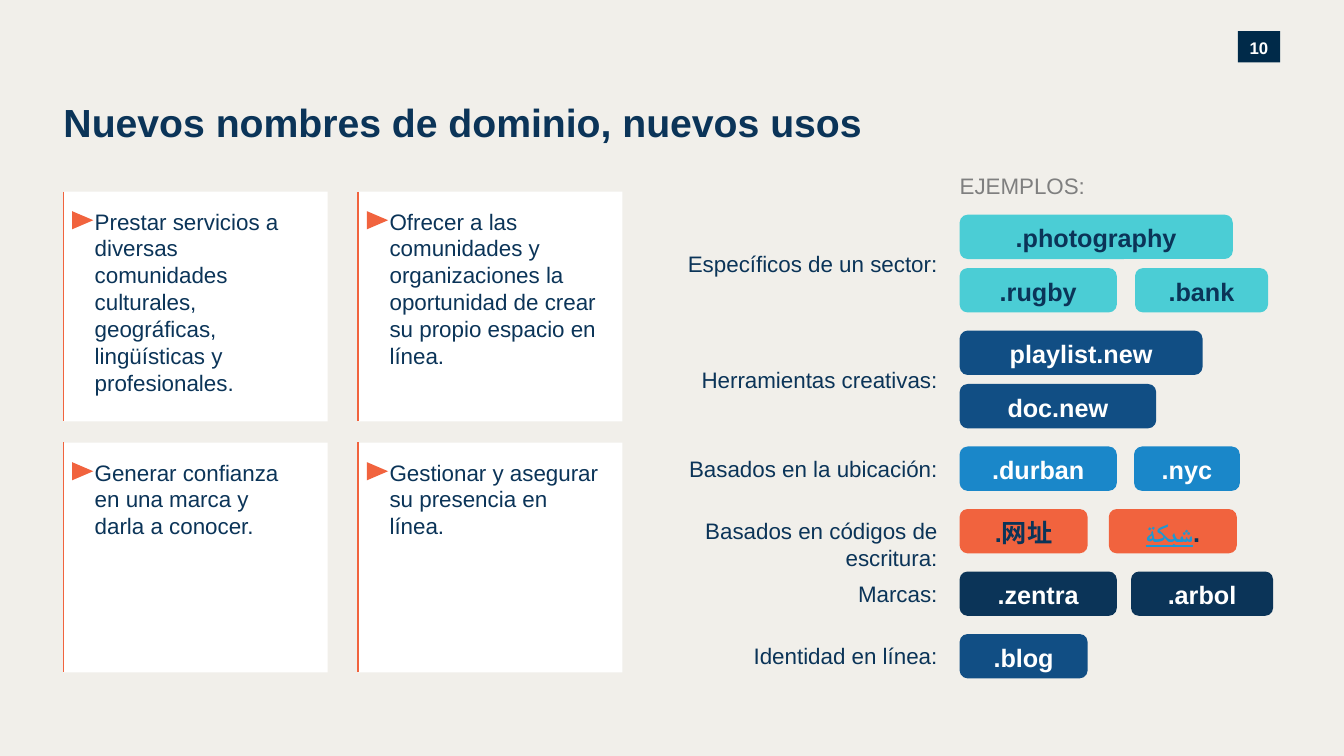
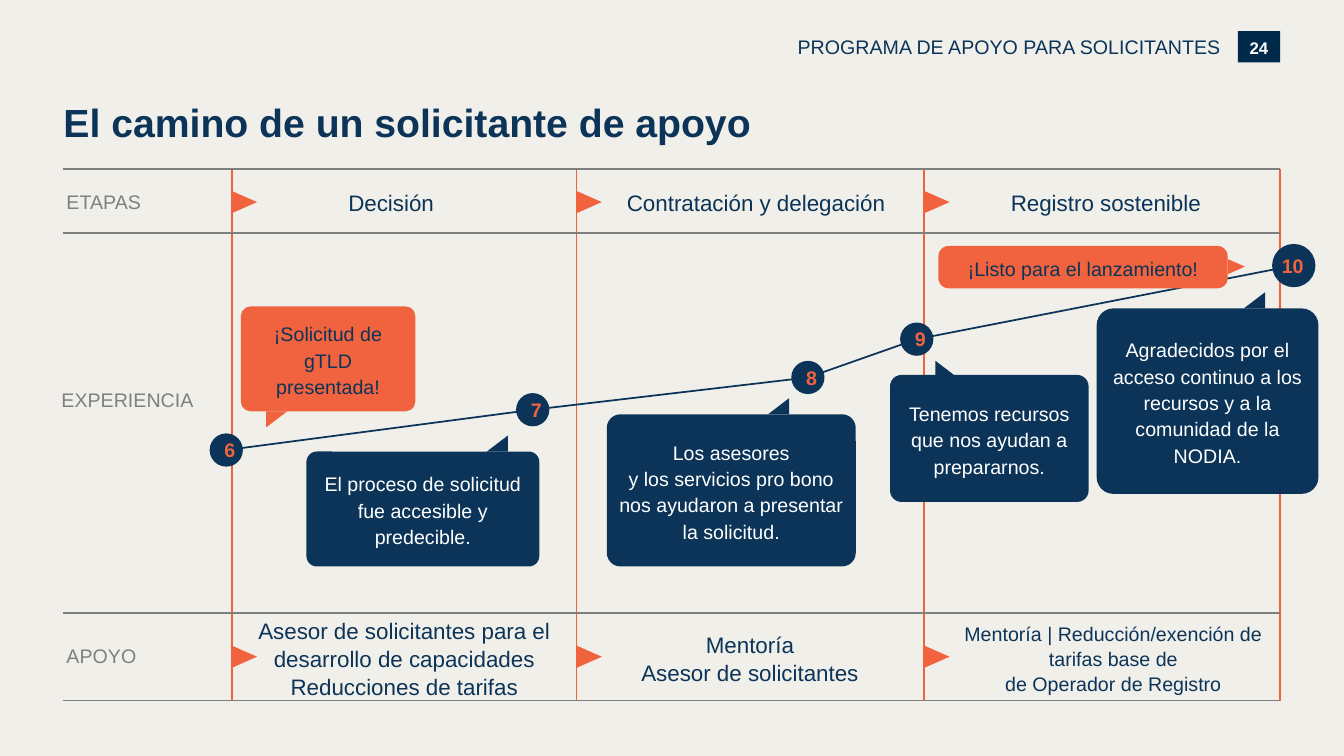
from itertools import pairwise

from lxml.etree import SubElement
from pptx import Presentation
from pptx.dml.color import RGBColor
from pptx.enum.shapes import MSO_CONNECTOR, MSO_SHAPE
from pptx.enum.text import MSO_ANCHOR, MSO_AUTO_SIZE, PP_ALIGN
from pptx.oxml.ns import qn
from pptx.util import Inches, Pt


class Theme:
    font = "Arial"
    paper, white, gray = "F1EFEA", "FFFFFF", "7F7F7F"
    navy, night, blue, sky = "0B3458", "002A49", "114E84", "1A87C9"
    aqua, coral, link = "4BCDD5", "F1633E", "1D98D3"
    title, tag, body, note, page = 28, 18, 16, 14, 12
    rule = 1.25


# All lengths are counted in cells of a square grid, ten cells to the inch.
CELL = Inches(0.1)
WIDE, HIGH = 133.33, 75
LEFT, RIGHT = 6.3, 127
RECT, ROUND, OVAL = MSO_SHAPE.RECTANGLE, MSO_SHAPE.ROUNDED_RECTANGLE, MSO_SHAPE.OVAL
ARROW, TAIL = MSO_SHAPE.ISOSCELES_TRIANGLE, MSO_SHAPE.RIGHT_TRIANGLE
TOP, MID = MSO_ANCHOR.TOP, MSO_ANCHOR.MIDDLE


def box(page, kind, at, text="", fill=None, ink=Theme.navy, size=Theme.body,
        bold=False, align=PP_ALIGN.CENTER, anchor=MID, pad=(0, 0, 0, 0),
        space=1.0, bend=None, turn=0, flip=False):
    """Add a filled shape, or a text box when kind is None; at is in cells."""
    place = [int(n * CELL) for n in at]
    if kind is None:
        item = page.shapes.add_textbox(*place)
    else:
        item = page.shapes.add_shape(kind, *place)
        item.shadow.inherit = False
        item.fill.solid()
        item.fill.fore_color.rgb = RGBColor.from_string(fill)
        item.line.fill.background()
        item.rotation = turn
        if bend is not None:
            item.adjustments[0] = bend
        if flip:
            item._element.spPr.xfrm.set("flipH", "1")
    if text:
        frame = item.text_frame
        frame.word_wrap = True
        frame.vertical_anchor = anchor
        (frame.margin_left, frame.margin_top,
         frame.margin_right, frame.margin_bottom) = [int(n * CELL) for n in pad]
        frame.text = text
        for para in frame.paragraphs:
            para.alignment = align
            para.line_spacing = space
            for run in para.runs:
                run.font.name = Theme.font
                run.font.size = Pt(size)
                run.font.bold = bold
                run.font.color.rgb = RGBColor.from_string(ink)
    return item


def line(page, start, end, ink):
    ends = [int(n * CELL) for n in (*start, *end)]
    item = page.shapes.add_connector(MSO_CONNECTOR.STRAIGHT, *ends)
    item.line.color.rgb = RGBColor.from_string(ink)
    item.line.width = Pt(Theme.rule)
    SubElement(item._element.spPr, qn("a:effectLst"))


deck = Presentation()
deck.slide_width, deck.slide_height = int(WIDE * CELL), int(HIGH * CELL)
back = deck.slide_master.background.fill
back.solid()
back.fore_color.rgb = RGBColor.from_string(Theme.paper)

# Shared frame: title and page number
layout = deck.slide_layouts[5]
head = layout.placeholders[0]
head.left, head.top, head.width, head.height = [
    int(n * CELL) for n in (LEFT, 9.8, 85.1, 5.7)]
pages = []
for title, number in [("Nuevos nombres de dominio, nuevos usos", "10"),
                      ("El camino de un solicitante de apoyo", "24")]:
    page = deck.slides.add_slide(layout)
    frame = page.shapes.title.text_frame
    frame.text = title
    frame.auto_size = MSO_AUTO_SIZE.NONE
    frame.vertical_anchor = TOP
    frame.margin_left = frame.margin_top = frame.margin_right = frame.margin_bottom = 0
    para = frame.paragraphs[0]
    para.alignment = PP_ALIGN.LEFT
    font = para.runs[0].font
    font.name, font.size, font.bold = Theme.font, Pt(Theme.title), True
    font.color.rgb = RGBColor.from_string(Theme.navy)
    box(page, RECT, (RIGHT - 4.2, 3.1, 4.2, 3.1), number, Theme.night,
        Theme.white, Theme.page, True, space=1.08)
    pages.append(page)
uses, road = pages

# Slide 1: cards in a grid of two by two
cards = [
    ("Prestar servicios a diversas comunidades culturales, geográficas, "
     "lingüísticas y profesionales.", 2.4),
    ("Ofrecer a las comunidades y organizaciones la oportunidad de crear "
     "su propio espacio en línea.", 2),
    ("Generar confianza en una marca y darla a conocer.", 3.9),
    ("Gestionar y asegurar su presencia en línea.", 2),
]
for i, (text, inset) in enumerate(cards):
    x, y = LEFT + i % 2 * 29.25, 19 + i // 2 * 24.9
    box(uses, RECT, (x, y, 26.2, 22.8), text, Theme.white,
        align=PP_ALIGN.LEFT, anchor=TOP, pad=(3.1, 1.6, inset, 2))
    box(uses, ARROW, (x + 1, y + 1.8, 1.8, 2.1), fill=Theme.coral, turn=90)
    line(uses, (x, y), (x, y + 22.8), Theme.coral)

# Slide 1: labels with their example tags, one inner list per line of tags
edge, tall, step, gap = 95.2, 4.4, 5.3, 1.8
box(uses, None, (edge, 17.1, 32.9, 2.7), "EJEMPLOS:", ink=Theme.gray,
    align=PP_ALIGN.LEFT, anchor=TOP)
groups = [
    ("Específicos de un sector:", Theme.aqua, Theme.navy,
     [[(".photography", edge, 27.1)],
      [(".rugby", edge, 15.6), (".bank", 112.6, 13.2)]]),
    ("Herramientas creativas:", Theme.blue, Theme.white,
     [[("playlist.new", edge, 24.1)], [("doc.new", edge, 19.5)]]),
    ("Basados en la ubicación:", Theme.sky, Theme.white,
     [[(".durban", edge, 15.6), (".nyc", 112.5, 10.5)]]),
    ("Basados en códigos de escritura:", Theme.coral, Theme.navy,
     [[(".网址", edge, 12.7), ("شبكة", 110, 12.7)]]),
    ("Marcas:", Theme.navy, Theme.white,
     [[(".zentra", edge, 15.6), (".arbol", 112.2, 14.1)]]),
    ("Identidad en línea:", Theme.blue, Theme.white,
     [[(".blog", edge, 12.7)]]),
]
y = 21.3
for label, fill, ink, rows in groups:
    deep = tall + (len(rows) - 1) * step
    box(uses, None, (61.8, y + deep / 2 - 1.35, 31.2, 2.7), label,
        align=PP_ALIGN.RIGHT, anchor=TOP)
    for i, row in enumerate(rows):
        for text, x, wide in row:
            tag = box(uses, ROUND, (x, y + i * step, wide, tall), text, fill, ink,
                      Theme.tag, True, space=1.06, bend=0.18)
            if text == "شبكة":
                para = tag.text_frame.paragraphs[0]
                word, dot = para.runs[0].font, para.add_run()
                dot.text = "."
                dot.font.name, dot.font.size, dot.font.bold = word.name, word.size, True
                dot.font.color.rgb = word.color.rgb
                word.color.rgb = RGBColor.from_string(Theme.link)
                word.underline = True
    y += deep + gap

# Slide 2: table lines, row names and stages
box(road, None, (72.8, 3.5, 48.3, 2.4), "PROGRAMA DE APOYO PARA SOLICITANTES",
    size=Theme.note, align=PP_ALIGN.RIGHT, anchor=TOP)
for name, x, y in [("ETAPAS", 6.6, 18.8), ("EXPERIENCIA", 6.1, 38.5),
                   ("APOYO", 6.6, 63.9)]:
    box(road, None, (x, y, 16.4, 2.4), name, ink=Theme.gray, size=Theme.note,
        align=PP_ALIGN.LEFT, anchor=TOP)
for x in (23, 57.2, 91.7, RIGHT):
    line(road, (x, 16.8), (x, 69.5), Theme.coral)
for y in (16.8, 23.1, 60.8, 69.5):
    line(road, (LEFT, y), (RIGHT, y), Theme.gray)
stages = [
    (23, "Decisión", 22.7, 23.4, 33.4, Theme.body,
     "Asesor de solicitantes para el desarrollo de capacidades\vReducciones de tarifas"),
    (57.2, "Contratación y delegación", 58.9, 57.2, 34.4, Theme.body,
     "Mentoría\vAsesor de solicitantes"),
    (91.7, "Registro sostenible", 93.6, 91.4, 38.1, Theme.note,
     "Mentoría | Reducción/exención de\ntarifas base de\nde Operador de Registro"),
]
for edge, stage, x, left, wide, size, help_text in stages:
    box(road, None, (x, 17.7, 32.2, 4.6), stage, space=1.06)
    box(road, None, (left, 61.4, wide, 7.7), help_text, size=size, space=1.06)
    for y in (18.8, 63.9):
        box(road, ARROW, (edge + 0.15, y, 2.2, 2.5), fill=Theme.coral, turn=90)

# Slide 2: the path and its numbered stops, given by their centres
stops = [("6", 22.45, 44.65, 3.3), ("7", 52.85, 40.65, 3.3), ("8", 80.15, 37.45, 3.3),
         ("9", 90.95, 33.65, 3.3), ("10", 128.35, 26.35, 4.3)]
for start, end in pairwise(stops):
    line(road, start[1:3], end[1:3], Theme.navy)
for number, x, y, size in stops:
    pad = (0, 0, 0.2, 0) if len(number) > 1 else (1, 0.5, 1, 0.5)
    box(road, OVAL, (x - size / 2, y - size / 2, size, size), number, Theme.navy,
        Theme.coral, Theme.note, True, pad=pad)

# Slide 2: speech bubbles, each with the place, turn and flip of its tail
bubbles = [
    ("¡Solicitud de gTLD presentada!", (23.9, 30.4, 17.3, 10.4),
     Theme.coral, Theme.navy, (26.4, 40.8), 180, True),
    ("El proceso de solicitud fue accesible y predecible.", (30.4, 44.8, 23.1, 11.4),
     Theme.navy, Theme.white, (48.3, 43.2), 0, True),
    ("Los asesores\ny los servicios pro bono nos ayudaron a presentar la solicitud.",
     (60.2, 41.1, 24.7, 15.1), Theme.navy, Theme.white, (76.2, 39.5), 0, True),
    ("Tenemos recursos que nos ayudan a prepararnos.", (88.3, 37.2, 19.7, 12.6),
     Theme.navy, Theme.white, (92.8, 35.8), 0, False),
    ("Agradecidos por el acceso continuo a los recursos y a la comunidad de la NODIA.",
     (108.8, 30.6, 22, 18.4), Theme.navy, Theme.white, (123.4, 29), 0, True),
]
pad = (0.8, 0.4, 0.8, 0.4)
for text, at, fill, ink, tail, turn, flip in bubbles:
    box(road, ROUND, at, text, fill, ink, Theme.note, pad=pad, space=1.12, bend=0.09)
    box(road, TAIL, (*tail, 2.1, 1.6), fill=fill, turn=turn, flip=flip)
box(road, ROUND, (93.1, 24.4, 28.7, 4.2), "¡Listo para el lanzamiento!", Theme.coral,
    size=Theme.note, pad=pad, space=1.12, bend=0.24)
box(road, ARROW, (121.9, 25.6, 1.5, 1.7), fill=Theme.coral, turn=90)

deck.save("out.pptx")
